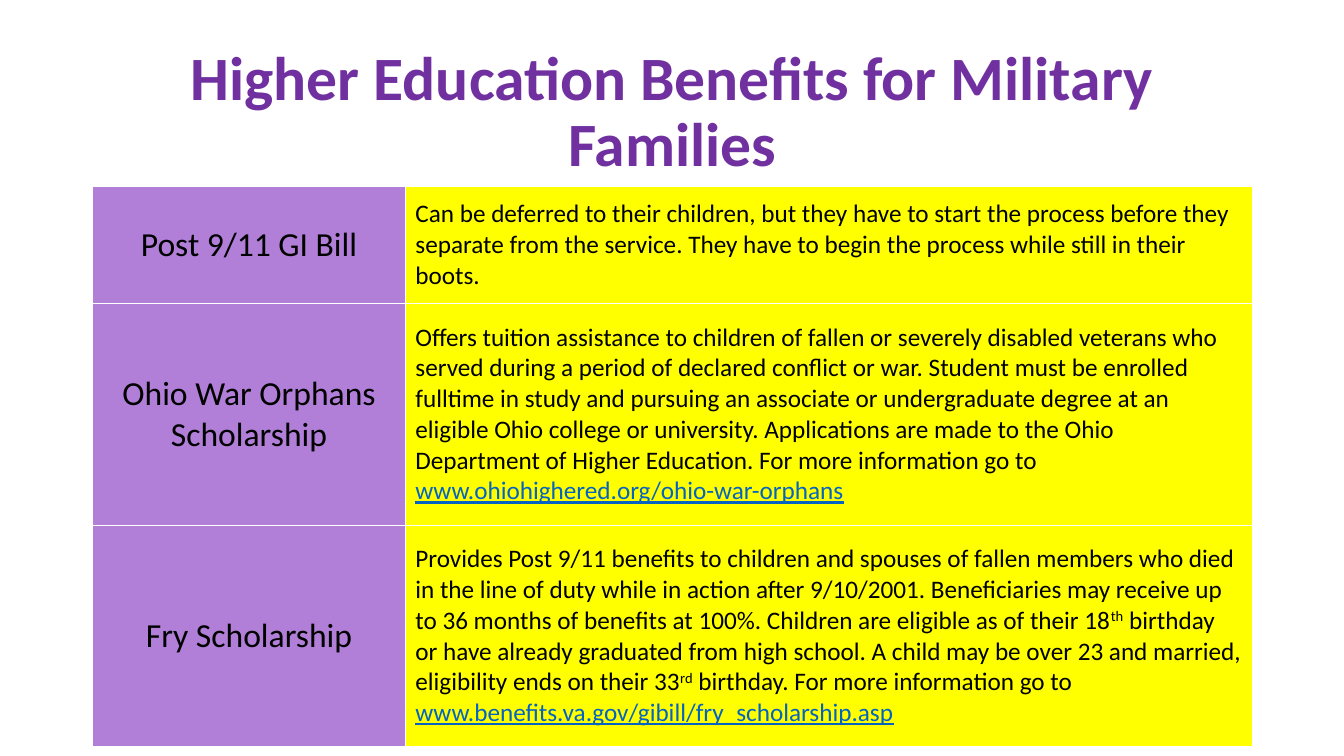
from lxml.etree import SubElement
from pptx import Presentation
from pptx.dml.color import RGBColor
from pptx.enum.text import MSO_ANCHOR as Anchor, PP_ALIGN as Align
from pptx.oxml.ns import qn
from pptx.util import Inches, Pt

COLORS = {
    "title": "7030A0",
    "name": "B17ED8",
    "details": "FFFF00",
    "text": "000000",
    "link": "0563C1",
    "border": "FFFFFF",
}

# Details are lists of (text, kind) runs.
BENEFITS = [
    ("Post 9/11 GI Bill", 1.16, [
        ("Can be deferred to their children, but they have to start the process before they "
         "separate from the service. They have to begin the process while still in their boots.",
         "plain"),
    ]),
    ("Ohio War Orphans Scholarship", 2.2, [
        ("Offers tuition assistance to children of fallen or severely disabled veterans who "
         "served during a period of declared conflict or war. Student must be enrolled fulltime "
         "in study and pursuing an associate or undergraduate degree at an eligible Ohio college "
         "or university. Applications are made to the Ohio Department of Higher Education. "
         "For more information go to ", "plain"),
        ("www.ohiohighered.org/ohio-war-orphans", "link"),
    ]),
    ("Fry Scholarship", 2.2, [
        ("Provides Post 9/11 benefits to children and spouses of fallen members who died in the "
         "line of duty while in action after 9/10/2001. Beneficiaries may receive up to 36 months "
         "of benefits at 100%. Children are eligible as of their 18", "plain"),
        ("th", "superscript"),
        (" birthday or have already graduated from high school. A child may be over 23 and "
         "married, eligibility ends on their 33", "plain"),
        ("rd", "superscript"),
        (" birthday. For more information go to ", "plain"),
        ("www.benefits.va.gov/gibill/fry_scholarship.asp", "link"),
    ]),
]


class SlideBuilder:
    def __init__(self, slide, font="Calibri"):
        self.slide = slide
        self.font = font

    def format_run(self, run, size, color="text", bold=False):
        run.font.name = self.font
        run.font.size = Pt(size)
        run.font.bold = bold
        run.font.color.rgb = RGBColor.from_string(COLORS[color])

    def title(self, text, left, top, width, height):
        box = self.slide.shapes.add_textbox(
            Inches(left), Inches(top), Inches(width), Inches(height))
        text_frame = box.text_frame
        text_frame.word_wrap = True
        text_frame.vertical_anchor = Anchor.MIDDLE
        text_frame.text = text
        paragraph = text_frame.paragraphs[0]
        paragraph.alignment = Align.CENTER
        paragraph.line_spacing = 0.9
        self.format_run(paragraph.runs[0], 44, "title", bold=True)

    def cell(self, cell, runs, size, fill, alignment):
        self.cell_borders(cell)
        cell.fill.solid()
        cell.fill.fore_color.rgb = RGBColor.from_string(COLORS[fill])
        cell.vertical_anchor = Anchor.MIDDLE
        paragraph = cell.text_frame.paragraphs[0]
        paragraph.alignment = alignment
        for text, kind in runs:
            run = paragraph.add_run()
            run.text = text
            self.format_run(run, size, "link" if kind == "link" else "text")
            if kind == "link":
                run.font.underline = True
            elif kind == "superscript":
                run._r.get_or_add_rPr().set("baseline", "30000")

    def cell_borders(self, cell):
        properties = cell._tc.get_or_add_tcPr()
        for side in ("lnL", "lnR", "lnT", "lnB"):
            line = SubElement(properties, qn(f"a:{side}"), w=str(Pt(1)))
            fill = SubElement(line, qn("a:solidFill"))
            SubElement(fill, qn("a:srgbClr"), val=COLORS["border"])

    def benefits_table(self, benefits, left, top, column_widths):
        height = sum(row_height for _, row_height, _ in benefits)
        table = self.slide.shapes.add_table(
            len(benefits), len(column_widths), Inches(left), Inches(top),
            Inches(sum(column_widths)), Inches(height)).table
        table.first_row = False
        table.horz_banding = False
        for column, width in zip(table.columns, column_widths):
            column.width = Inches(width)
        for row, (name, row_height, details) in zip(table.rows, benefits):
            row.height = Inches(row_height)
            name_cell, details_cell = row.cells
            self.cell(name_cell, [(name, "plain")], 24, "name", Align.CENTER)
            self.cell(details_cell, details, 18, "details", Align.LEFT)


def main():
    presentation = Presentation()
    presentation.slide_width = Inches(13.33)
    presentation.slide_height = Inches(7.5)
    slide = presentation.slides.add_slide(presentation.slide_layouts[6])
    builder = SlideBuilder(slide)
    builder.title("Higher Education Benefits for Military Families", 0.92, 0.4, 11.5, 1.45)
    builder.benefits_table(BENEFITS, 0.92, 1.85, (3.1, 8.4))
    presentation.save("out.pptx")


if __name__ == "__main__":
    main()
